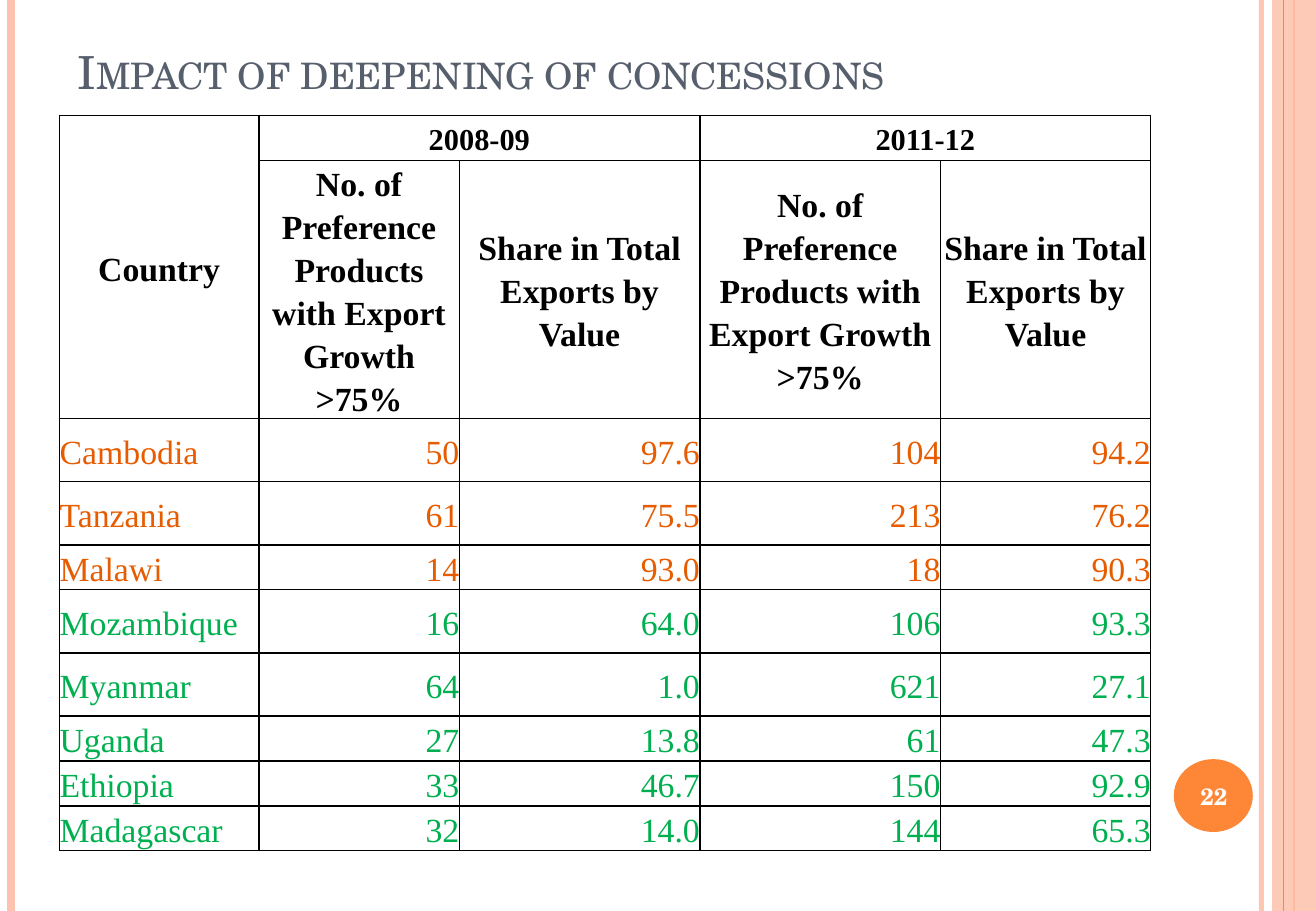
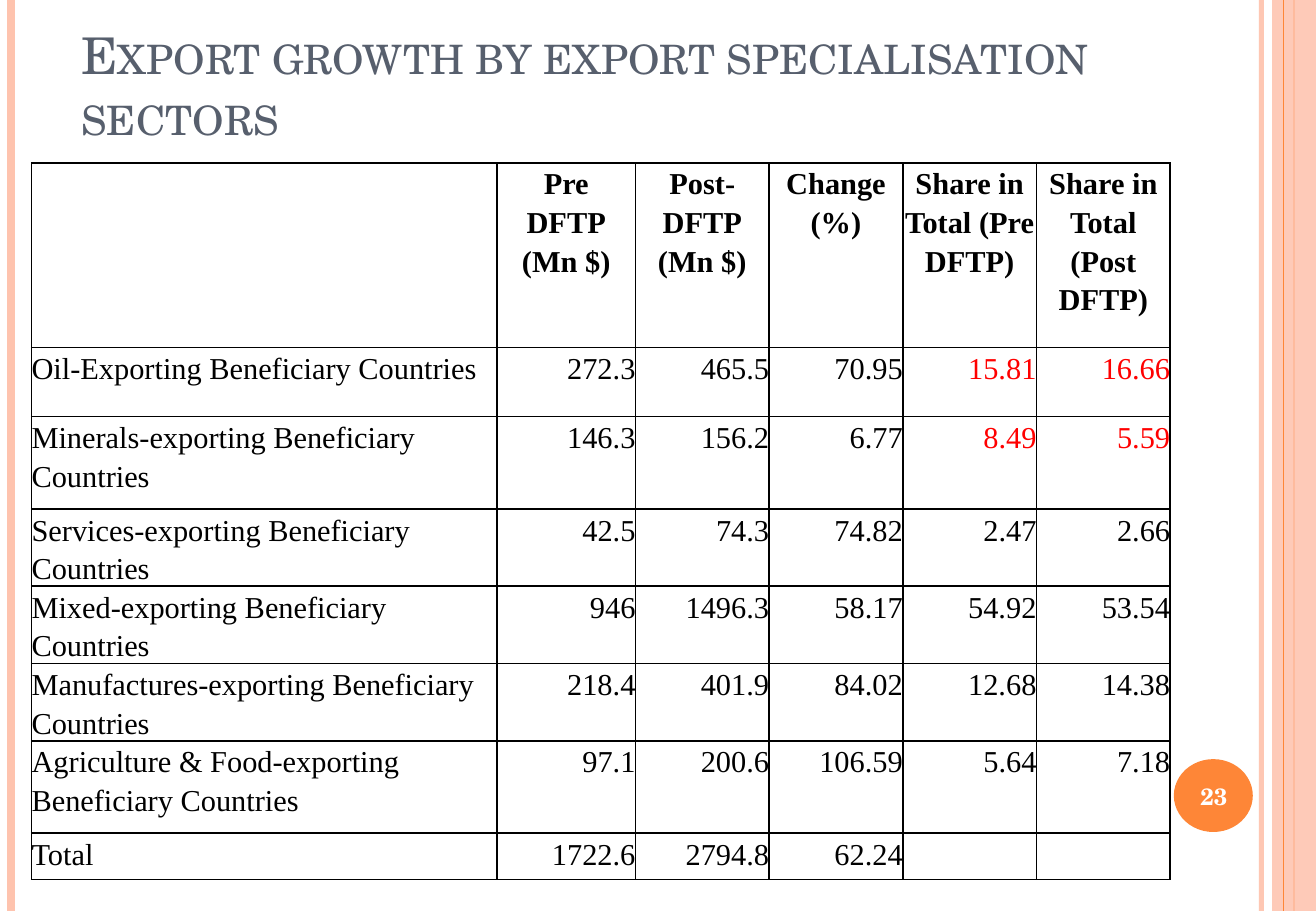
"""Build two table slides on trade concessions and export growth."""
from lxml import etree
from pptx import Presentation
from pptx.dml.color import RGBColor
from pptx.enum.shapes import MSO_CONNECTOR, MSO_SHAPE
from pptx.enum.text import MSO_ANCHOR, MSO_AUTO_SIZE, PP_ALIGN
from pptx.oxml.ns import qn
from pptx.util import Inches, Pt

LEFT, MID, RIGHT = PP_ALIGN.LEFT, PP_ALIGN.CENTER, PP_ALIGN.RIGHT
TOP, CENTRE, BOTTOM = MSO_ANCHOR.TOP, MSO_ANCHOR.MIDDLE, MSO_ANCHOR.BOTTOM
STRAIGHT = MSO_CONNECTOR.STRAIGHT
RECT, OVAL = MSO_SHAPE.RECTANGLE, MSO_SHAPE.OVAL
FIXED = MSO_AUTO_SIZE.NONE

PEACH = RGBColor(0xFE, 0xC3, 0xAE)
ORANGE = RGBColor(0xFE, 0x86, 0x37)
SLATE = RGBColor(0x57, 0x5F, 0x6D)
RUST = RGBColor(0xE7, 0x5C, 0x01)
GREEN = RGBColor(0x00, 0xB0, 0x50)
RED = RGBColor(0xFF, 0x00, 0x00)
BLACK = RGBColor(0, 0, 0)
WHITE = RGBColor(0xFF, 0xFF, 0xFF)

SERIF, BODY = "TeX Gyre Schola", "Times New Roman"
WIDE, HIGH = 10.83, 7.5

BANDS = [
    ("line", 10.38, 3, PEACH, 93),
    ("line", 0.09, 4.5, PEACH, 100),
    ("line", 10.65, 1.5, ORANGE, 100),
    (RECT, (10.47, 0, 0.36, HIGH), 0, PEACH, 87),
    ("line", 10.56, 0.75, ORANGE, 100),
    (OVAL, (9.66, 6.25, 0.65, 0.6), 0, ORANGE, 100),
]

COUNT = "No. of Preference Products with Export Growth >75%"
SHARE = "Share in Total Exports by Value"

SLIDES = [
    {
        "title": "Impact of deepening of concessions",
        "box": (0.54, 0.3, 8.85, 0.56), "size": 27, "page": "22",
        "at": (0.49, 0.95), "cols": (1.64, 1.65, 1.98, 1.98, 1.73),
        "heads": 2, "font": 20, "small": {(0, 1), (0, 3)}, "anchor": CENTRE,
        "spans": [(0, 0, 1, 0), (0, 1, 0, 2), (0, 3, 0, 4)],
        "rows": [
            (0.37, BLACK, BLACK, ("Country", "2008-09", None, "2011-12", None)),
            (2.07, BLACK, BLACK, (None, COUNT, SHARE, COUNT, SHARE)),
            (0.52, RUST, RUST, ("Cambodia", "50", "97.6", "104", "94.2")),
            (0.52, RUST, RUST, ("Tanzania", "61", "75.5", "213", "76.2")),
            (0.37, RUST, RUST, ("Malawi", "14", "93.0", "18", "90.3")),
            (0.52, GREEN, GREEN, ("Mozambique", "16", "64.0", "106", "93.3")),
            (0.52, GREEN, GREEN, ("Myanmar", "64", "1.0", "621", "27.1")),
            (0.37, GREEN, GREEN, ("Uganda", "27", "13.8", "61", "47.3")),
            (0.37, GREEN, GREEN, ("Ethiopia", "33", "46.7", "150", "92.9")),
            (0.37, GREEN, GREEN, ("Madagascar", "32", "14.0", "144", "65.3")),
        ],
    },
    {
        "title": "Export growth by export specialisation sectors",
        "box": (0.57, 0, 8.85, 1.25), "size": 30, "page": "23",
        "at": (0.26, 1.34), "cols": (3.83, 1.14, 1.1, 1.1, 1.1, 1.1),
        "heads": 1, "font": 18, "small": set(), "anchor": TOP, "spans": [],
        "rows": [
            (1.52, BLACK, BLACK, (None, "Pre\nDFTP\n(Mn $)", "Post- DFTP\n(Mn $)", "Change (%)",
                                  "Share in Total (Pre DFTP)", "Share in Total (Post DFTP)")),
            (0.57, BLACK, RED, ("Oil-Exporting Beneficiary Countries",
                                "272.3", "465.5", "70.95", "15.81", "16.66")),
            (0.76, BLACK, RED, ("Minerals-exporting Beneficiary Countries",
                                "146.3", "156.2", "6.77", "8.49", "5.59")),
            (0.57, BLACK, BLACK, ("Services-exporting Beneficiary Countries",
                                  "42.5", "74.3", "74.82", "2.47", "2.66")),
            (0.57, BLACK, BLACK, ("Mixed-exporting Beneficiary Countries",
                                  "946", "1496.3", "58.17", "54.92", "53.54")),
            (0.57, BLACK, BLACK, ("Manufactures-exporting Beneficiary Countries",
                                  "218.4", "401.9", "84.02", "12.68", "14.38")),
            (0.76, BLACK, BLACK, ("Agriculture & Food-exporting Beneficiary Countries",
                                  "97.1", "200.6", "106.59", "5.64", "7.18")),
            (0.38, BLACK, BLACK, ("Total", "1722.6", "2794.8", "62.24", None, None)),
        ],
    },
]


def inches(vals):
    return [Inches(v) for v in vals]


def write(par, text, size, ink, font, align, bold=False):
    par.alignment = align
    run = par.add_run()
    run.text = text
    run.font.size = Pt(size)
    run.font.name = font
    run.font.bold = bold
    run.font.color.rgb = ink


def add_bands(slide, master):
    for num, (kind, place, width, ink, alpha) in enumerate(BANDS):
        if kind == "line":
            ends = inches((place, 0, place, HIGH))
            band = slide.shapes.add_connector(STRAIGHT, *ends)
            band.line.color.rgb = ink
            band.line.width = Pt(width)
            etree.SubElement(band.element.spPr, qn("a:effectLst"))
        else:
            band = slide.shapes.add_shape(kind, *inches(place))
            band.shadow.inherit = False
            band.fill.solid()
            band.fill.fore_color.rgb = ink
            band.line.fill.background()
        node = band.element
        if alpha < 100:
            tint = next(node.iter(qn("a:srgbClr")))
            etree.SubElement(tint, qn("a:alpha"), val=str(alpha * 1000))
        next(node.iter(qn("p:cNvPr"))).set("id", str(20 + num))
        master.shapes.element.append(node)


def add_title(slide, data):
    title = slide.shapes.title
    title.left, title.top, title.width, title.height = inches(data["box"])
    frame = title.text_frame
    frame.auto_size = FIXED
    frame.vertical_anchor = BOTTOM
    write(frame.paragraphs[0], data["title"], data["size"], SLATE, SERIF, LEFT)
    next(title.element.iter(qn("a:rPr"))).set("cap", "small")


def style(cell, anchor):
    cell.margin_left = cell.margin_right = cell.margin_top = cell.margin_bottom = 0
    cell.vertical_anchor = anchor
    cell.fill.background()


def add_rules(node):
    for props in list(node.iter(qn("a:tcPr"))):
        for spot, side in enumerate(("lnL", "lnR", "lnT", "lnB")):
            edge = etree.Element(qn("a:" + side), w=str(Pt(1)))
            fill = etree.SubElement(edge, qn("a:solidFill"))
            etree.SubElement(fill, qn("a:srgbClr"), val=str(BLACK))
            props.insert(spot, edge)


def add_grid(slide, data):
    rows, cols = data["rows"], data["cols"]
    size = inches((sum(cols), sum(row[0] for row in rows)))
    frame = slide.shapes.add_table(len(rows), len(cols), *inches(data["at"]), *size)
    table = frame.table
    table.first_row = table.horz_banding = False
    for col, width in zip(table.columns, cols):
        col.width = Inches(width)
    for r, (height, ink, last, texts) in enumerate(rows):
        table.rows[r].height = Inches(height)
        head = r < data["heads"]
        for c, text in enumerate(texts):
            cell = table.cell(r, c)
            style(cell, data["anchor"])
            if text is None:
                continue
            align = MID if head else RIGHT if c else LEFT
            pts = 18 if (r, c) in data["small"] else data["font"]
            body = cell.text_frame
            for n, line in enumerate(text.split("\n")):
                par = body.add_paragraph() if n else body.paragraphs[0]
                par.line_spacing = 1.15
                write(par, line, pts, last if c > 3 else ink, BODY, align, head)
    for top, left, end, right in data["spans"]:
        table.cell(top, left).merge(table.cell(end, right))
    add_rules(frame.element)


def add_page(slide, text):
    frame = slide.shapes.add_textbox(*inches((9.63, 6.27, 0.72, 0.57))).text_frame
    frame.word_wrap = True
    frame.vertical_anchor = CENTRE
    write(frame.paragraphs[0], text, 14, WHITE, SERIF, MID, True)


def main():
    prs = Presentation()
    prs.slide_width, prs.slide_height = inches((WIDE, HIGH))
    layout = prs.slide_layouts[5]
    for num, data in enumerate(SLIDES):
        slide = prs.slides.add_slide(layout)
        if num == 0:
            add_bands(slide, prs.slide_master)
        add_title(slide, data)
        add_grid(slide, data)
        add_page(slide, data["page"])
    prs.save("out.pptx")


if __name__ == "__main__":
    main()
